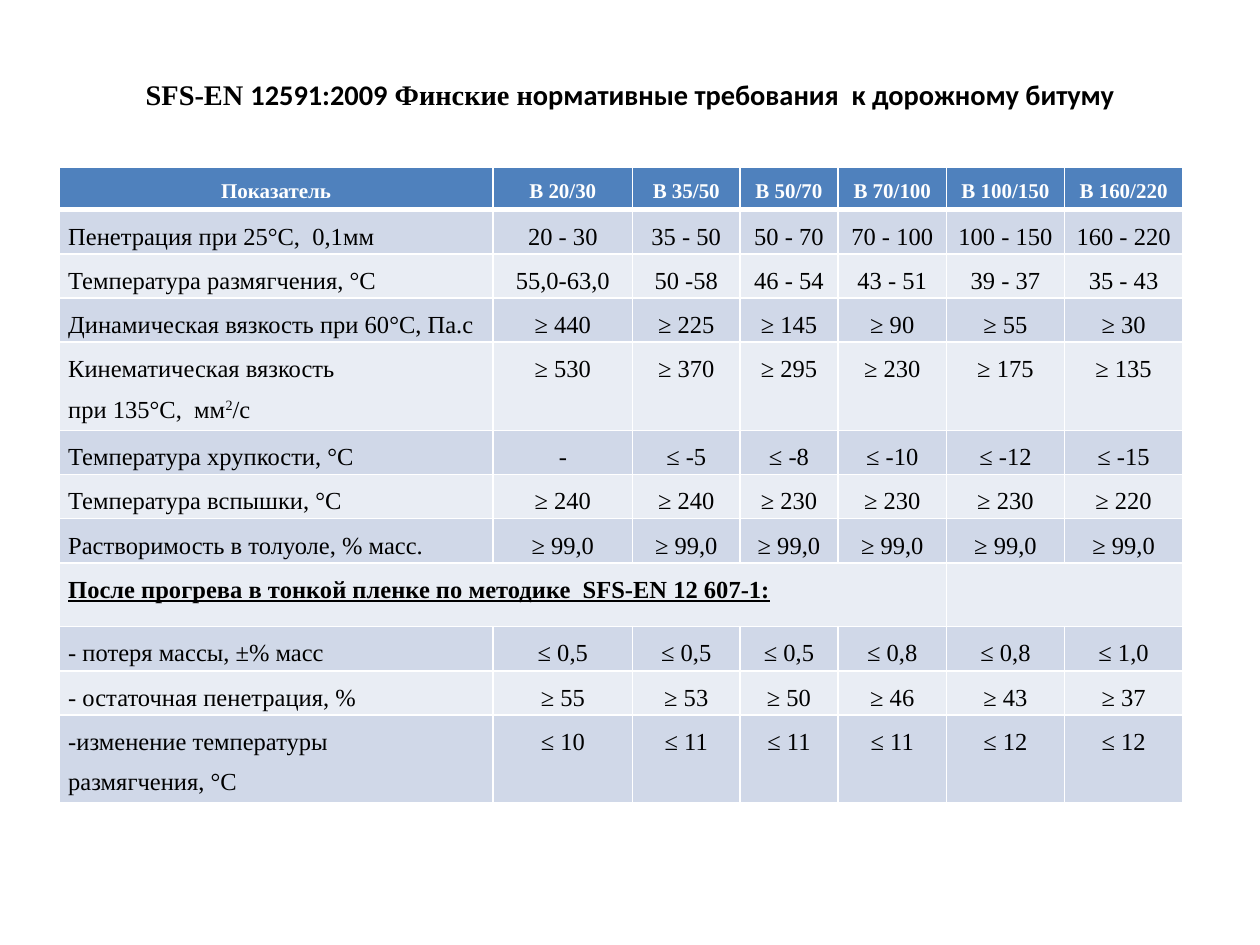
from lxml import etree
from pptx import Presentation
from pptx.dml.color import RGBColor
from pptx.enum.text import MSO_ANCHOR, PP_ALIGN
from pptx.oxml.ns import qn
from pptx.util import Pt

CENTER, LEFT = PP_ALIGN.CENTER, PP_ALIGN.LEFT
MIDDLE = MSO_ANCHOR.MIDDLE

BLACK = RGBColor(0x00, 0x00, 0x00)
WHITE = RGBColor(0xFF, 0xFF, 0xFF)
HEADER_BLUE = RGBColor(0x4F, 0x81, 0xBD)
BAND_DARK = RGBColor(0xD0, 0xD8, 0xE8)
BAND_LIGHT = RGBColor(0xE9, 0xED, 0xF4)

SERIF, SANS = "Times New Roman", "Calibri"
TITLE_PARTS = [
    ("SFS-EN ", SERIF),
    ("12591:2009", SANS),
    (" Финские н", SERIF),
    ("ормативные требования  к дорожному битуму", SANS),
]

COLUMN_WIDTHS = [247.7, 79.9, 61.2, 56.2, 61.9, 67.5, 67.5]
SECTION_ROW = 8
SECTION_SPLIT = 5
# Height in points, then the cell texts; a caret encloses superscript text.
ROWS = [
    (24, ["Показатель", "В 20/30", "В 35/50", "В 50/70", "В 70/100", "В 100/150", "В 160/220"]),
    (25, ["Пенетрация при 25°С,  0,1мм", "20 - 30", "35 - 50", "50 - 70", "70 - 100", "100 - 150", "160 - 220"]),
    (24.5, ["Температура размягчения, °С", "55,0-63,0", "50 -58", "46 - 54", "43 - 51", "39 - 37", "35 - 43"]),
    (20, ["Динамическая вязкость при 60°С, Пa.с", "≥ 440", "≥ 225", "≥ 145", "≥ 90", "≥ 55", "≥ 30"]),
    (40, ["Кинематическая вязкость\nпри 135°С,  мм^2^/с", "≥ 530", "≥ 370", "≥ 295", "≥ 230", "≥ 175", "≥ 135"]),
    (25, ["Температура хрупкости, °С", "-", "≤ -5", "≤ -8", "≤ -10", "≤ -12", "≤ -15"]),
    (25, ["Температура вспышки, °С", "≥ 240", "≥ 240", "≥ 230", "≥ 230", "≥ 230", "≥ 220"]),
    (25, ["Растворимость в толуоле, % масс."] + ["≥ 99,0"] * 6),
    (36.5, ["После прогрева в тонкой пленке по методике  SFS-EN 12 607-1:"] + [""] * 6),
    (25, ["- потеря массы, ±% масс", "≤ 0,5", "≤ 0,5", "≤ 0,5", "≤ 0,8", "≤ 0,8", "≤ 1,0"]),
    (25, ["- остаточная пенетрация, %", "≥ 55", "≥ 53", "≥ 50", "≥ 46", "≥ 43", "≥ 37"]),
    (26, ["-изменение температуры\nразмягчения, °С", "≤ 10", "≤ 11", "≤ 11", "≤ 11", "≤ 12", "≤ 12"]),
]


def style_span(span, size, color, bold, font=SERIF):
    span.font.name = font
    span.font.size = Pt(size)
    span.font.bold = bold
    span.font.color.rgb = color


def add_title(page):
    box = page.shapes.add_textbox(Pt(36), Pt(22.5), Pt(648), Pt(63))
    frame = box.text_frame
    frame.word_wrap = True
    frame.vertical_anchor = MIDDLE
    para = frame.paragraphs[0]
    para.alignment = CENTER
    for text, font in TITLE_PARTS:
        span = para.add_run()
        span.text = text
        style_span(span, 16.2, BLACK, True, font)


def set_borders(cell, top, bottom):
    """Draw white cell edges; top and bottom are widths in points."""
    properties = cell._tc.get_or_add_tcPr()
    edges = [("lnL", 1), ("lnR", 1), ("lnT", top), ("lnB", bottom)]
    for position, (tag, width) in enumerate(edges):
        line = etree.Element(qn(f"a:{tag}"), w=str(Pt(width)))
        fill = etree.SubElement(line, qn("a:solidFill"))
        etree.SubElement(fill, qn("a:srgbClr"), val=str(WHITE))
        properties.insert(position, line)


def write_cell(cell, text, alignment, is_header, is_section):
    cell.margin_left = cell.margin_right = Pt(5)
    cell.margin_top = cell.margin_bottom = 0
    cell.text_frame.text = text.replace("^", "")
    for para, line in zip(cell.text_frame.paragraphs, text.split("\n")):
        para.alignment = alignment
        para.line_spacing = 1.5
        para.text = ""
        for index, part in enumerate(line.split("^")):
            if not part:
                continue
            span = para.add_run()
            span.text = part
            style_span(span, 12 if is_header else 14,
                       WHITE if is_header else BLACK, is_header or is_section)
            if is_section:
                span.font.underline = True
            if index % 2:
                span.font._element.set("baseline", "30000")


def add_requirements_table(page):
    height = sum(row_height for row_height, _ in ROWS)
    frame = page.shapes.add_table(len(ROWS), len(COLUMN_WIDTHS), Pt(34), Pt(95.8),
                                  Pt(sum(COLUMN_WIDTHS)), Pt(height))
    table = frame.table
    for column, width in zip(table.columns, COLUMN_WIDTHS):
        column.width = Pt(width)
    for row_index, (row_height, texts) in enumerate(ROWS):
        table.rows[row_index].height = Pt(row_height)
        is_header = row_index == 0
        band = BAND_DARK if row_index % 2 else BAND_LIGHT
        for column_index, text in enumerate(texts):
            cell = table.cell(row_index, column_index)
            cell.fill.solid()
            cell.fill.fore_color.rgb = HEADER_BLUE if is_header else band
            set_borders(cell, 3 if row_index == 1 else 1, 3 if is_header else 1)
            alignment = CENTER if is_header or column_index else LEFT
            write_cell(cell, text, alignment, is_header, row_index == SECTION_ROW)
    last = len(COLUMN_WIDTHS) - 1
    for first, end in [(0, SECTION_SPLIT - 1), (SECTION_SPLIT, last)]:
        table.cell(SECTION_ROW, first).merge(table.cell(SECTION_ROW, end))


def main():
    deck = Presentation()
    deck.slide_width, deck.slide_height = Pt(720), Pt(540)
    page = deck.slides.add_slide(deck.slide_layouts[6])
    add_title(page)
    add_requirements_table(page)
    deck.save("out.pptx")


if __name__ == "__main__":
    main()
